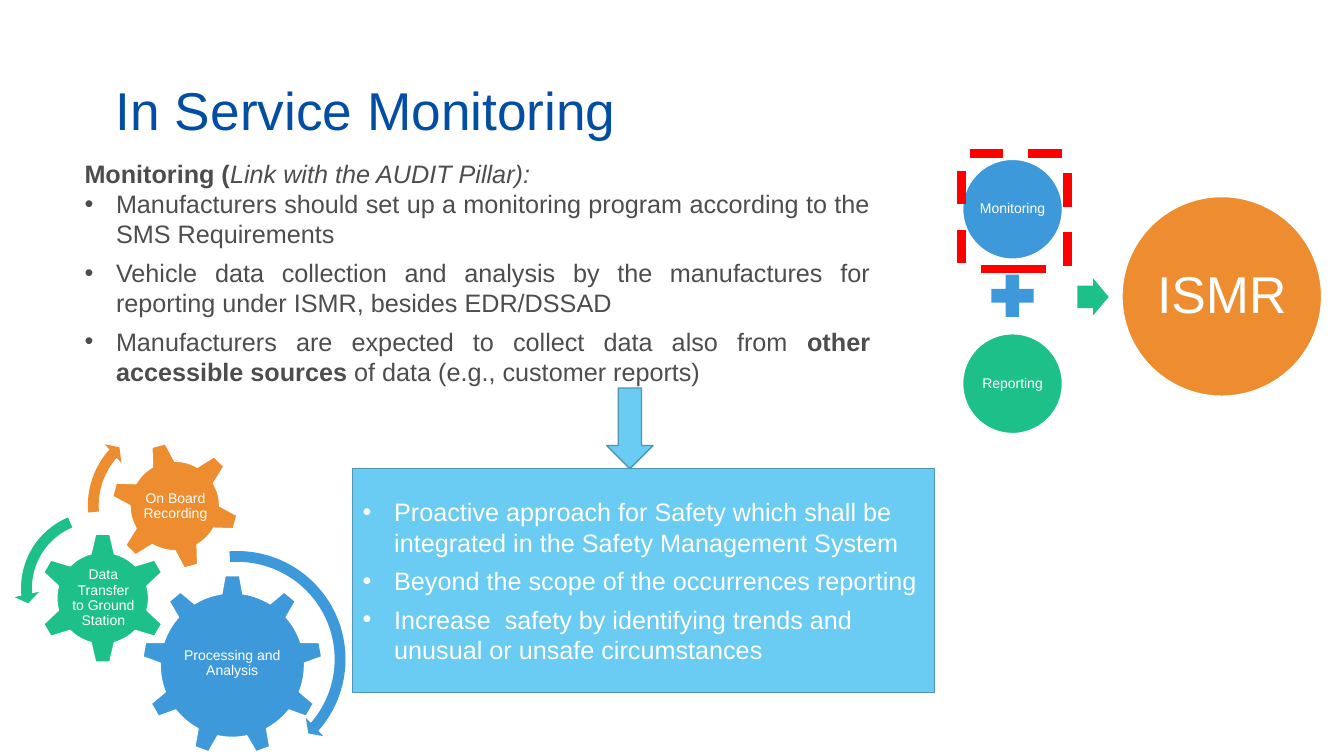
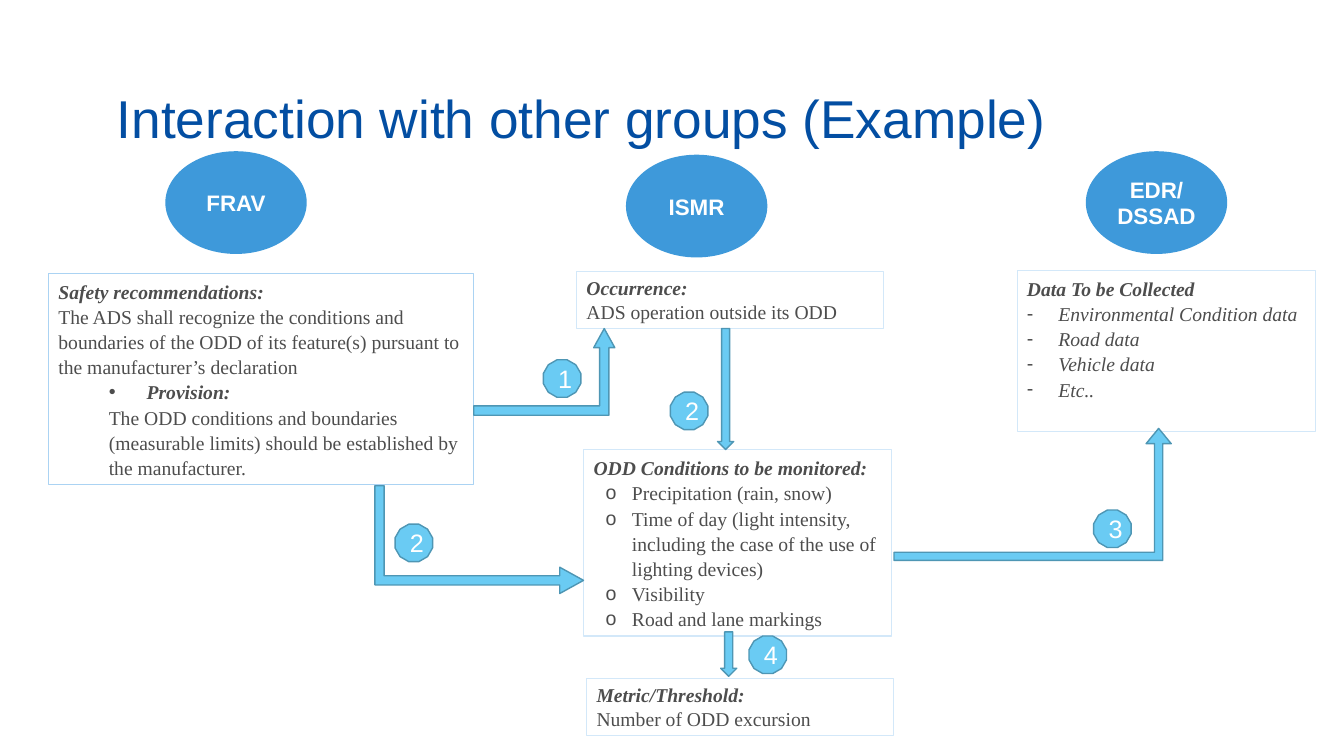
from dataclasses import dataclass
from typing import Optional

from lxml import etree
from pptx import Presentation
from pptx.dml.color import RGBColor
from pptx.enum import dml, shapes, text
from pptx.oxml import ns
from pptx.util import Pt

BLUE = RGBColor(0x3E, 0x99, 0xDA)
GREEN = RGBColor(0x1E, 0xC0, 0x8A)
ORANGE = RGBColor(0xED, 0x8D, 0x2F)
SKY = RGBColor(0x6A, 0xCB, 0xF3)
SKY_EDGE = RGBColor(0x4E, 0x96, 0xB4)
CARD_EDGE = RGBColor(0xD3, 0xE8, 0xF9)
STRONG_EDGE = RGBColor(0xAB, 0xD3, 0xF3)
TITLE_BLUE = RGBColor(0x03, 0x4E, 0xA2)
GRAY = RGBColor(0x4D, 0x4D, 0x4D)
RED = RGBColor(0xFF, 0x00, 0x00)
WHITE = RGBColor(0xFF, 0xFF, 0xFF)

SANS = "Arial"
SERIF = "Times New Roman"
KIND = shapes.MSO_SHAPE
ALIGN = text.PP_ALIGN
TOP, MIDDLE, BOTTOM = (text.MSO_ANCHOR.TOP, text.MSO_ANCHOR.MIDDLE,
                       text.MSO_ANCHOR.BOTTOM)


@dataclass
class Line:
    """One paragraph; runs are (text, style) pairs, style holding b and/or i."""
    runs: list
    bullet: str = ""
    margin: float = 0
    indent: float = 0
    align: ALIGN = ALIGN.LEFT
    after: float = 0
    spacing: Optional[float] = None


@dataclass
class Look:
    size: float
    color: RGBColor = WHITE
    font: str = SANS
    anchor: text.MSO_ANCHOR = MIDDLE
    inset: Optional[float] = None


BODY = Look(18, GRAY, anchor=TOP)
CALLOUT = Look(18)
CARD = Look(14, GRAY, SERIF, TOP)
SMALL_LABEL = Look(10, inset=1)
LARGE_LABEL = Look(37, inset=3.6)
GROUP_NAME = Look(16)
STEP = Look(18)


def inside(region, left, top, width, height):
    return region[0] + left, region[1] + top, width, height


def points(box):
    return [Pt(round(length, 2)) for length in box]


def write_lines(frame, lines, look):
    frame.word_wrap = True
    frame.vertical_anchor = look.anchor
    if look.inset is not None:
        frame.margin_left = frame.margin_right = Pt(look.inset)
        frame.margin_top = frame.margin_bottom = Pt(look.inset)
    for index, line in enumerate(lines):
        paragraph = frame.paragraphs[0] if index == 0 else frame.add_paragraph()
        properties = paragraph._p.get_or_add_pPr()
        if line.margin:
            properties.set("marL", str(Pt(line.margin)))
            properties.set("indent", str(Pt(line.indent)))
        if line.bullet:
            font = etree.SubElement(properties, ns.qn("a:buFont"))
            font.set("typeface", SANS)
            etree.SubElement(properties, ns.qn("a:buChar")).set("char", line.bullet)
        paragraph.alignment = line.align
        paragraph.space_after = Pt(line.after)
        if line.spacing:
            paragraph.line_spacing = line.spacing
        for words, style in line.runs:
            run = paragraph.add_run()
            run.text = words
            run.font.name = look.font
            run.font.size = Pt(look.size)
            run.font.color.rgb = look.color
            run.font.bold = "b" in style
            run.font.italic = "i" in style


def add_shape(slide, kind, box, fill=None, edge=None, width=1, adjust=(), rotation=0):
    shape = slide.shapes.add_shape(kind, *points(box))
    shape.shadow.inherit = False
    shape.rotation = rotation
    if fill is None:
        shape.fill.background()
    else:
        shape.fill.solid()
        shape.fill.fore_color.rgb = fill
    if edge is None:
        shape.line.fill.background()
    else:
        shape.line.color.rgb = edge
        shape.line.width = Pt(width)
    for index, value in enumerate(adjust):
        shape.adjustments[index] = value
    return shape


def add_text(slide, box, lines, look):
    write_lines(slide.shapes.add_textbox(*points(box)).text_frame, lines, look)


def centred(words, style="", spacing=None):
    return [Line([(words, style)], align=ALIGN.CENTER, spacing=spacing)]


def add_titled_slide(presentation, title, left, top):
    slide = presentation.slides.add_slide(presentation.slide_layouts[5])
    shape = slide.shapes.title
    shape.left, shape.top, shape.width, shape.height = points((left, top, 808, 62))
    frame = shape.text_frame
    frame.text = title
    frame.auto_size = text.MSO_AUTO_SIZE.NONE
    frame.vertical_anchor = BOTTOM
    frame.margin_bottom = 0
    paragraph = frame.paragraphs[0]
    paragraph.alignment = ALIGN.LEFT
    paragraph.line_spacing = 0.9
    font = paragraph.runs[0].font
    font.name, font.size, font.color.rgb = SANS, Pt(38), TITLE_BLUE
    return slide


def bullets(items, align):
    return [Line(runs, "•", 22.5, -22.5, align, 6) for runs in items]


def add_monitoring_text(slide, box):
    heading = Line([("Monitoring (", "b"), ("Link with the AUDIT Pillar):", "i")])
    items = [
        [("Manufacturers should set up a monitoring program according to the "
          "SMS Requirements", "")],
        [("Vehicle data collection and analysis by the manufactures for "
          "reporting under ISMR, besides EDR/DSSAD", "")],
        [("Manufacturers are expected to collect data also from ", ""),
         ("other accessible sources ", "b"),
         ("of data (e.g., customer reports)", "")],
    ]
    add_text(slide, box, [heading] + bullets(items, ALIGN.JUSTIFY), BODY)


def add_ismr_equation(slide, region):
    """Monitoring plus Reporting gives ISMR, with Monitoring framed."""
    circles = [
        ("Monitoring", 0, 0, 71.3, BLUE, SMALL_LABEL),
        ("Reporting", 0, 124.6, 71.3, GREEN, SMALL_LABEL),
        ("ISMR", 113.8, 26.6, 142.6, ORANGE, LARGE_LABEL),
    ]
    for name, left, top, size, color, look in circles:
        circle = add_shape(slide, KIND.OVAL, inside(region, left, top, size, size),
                           color, WHITE)
        write_lines(circle.text_frame, centred(name, spacing=0.9), look)
    add_shape(slide, KIND.MATH_PLUS, inside(region, 15.1, 77, 41, 41), BLUE)
    add_shape(slide, KIND.RIGHT_ARROW, inside(region, 82, 85, 22.4, 26.6), GREEN,
              adjust=(0.6, 0.5))
    frame = add_shape(slide, KIND.RECTANGLE, inside(region, -0.7, -4.3, 75.6, 82.8),
                      edge=RED, width=6)
    frame.line.dash_style = dml.MSO_LINE.DASH


def add_callout(slide, box):
    items = [
        "Proactive approach for Safety which shall be integrated in the Safety "
        "Management System",
        "Beyond the scope of the occurrences reporting",
        "Increase  safety by identifying trends and unusual or unsafe circumstances",
    ]
    panel = add_shape(slide, KIND.FLOWCHART_PROCESS, box, SKY, SKY_EDGE)
    lines = bullets([[(item, "")] for item in items], ALIGN.LEFT)
    write_lines(panel.text_frame, lines, CALLOUT)
    add_shape(slide, KIND.DOWN_ARROW, inside(box, 181.4, -57.6, 33.1, 57.6),
              SKY, SKY_EDGE)


def add_gears(slide, region):
    gears = [
        ("Processing and Analysis", KIND.GEAR_9, (91.5, 114.1, 128.9, 128.9),
         (117.4, 144.4, 77, 66.2), BLUE, 0),
        ("Data Transfer to Ground Station", KIND.GEAR_6, (16.6, 83.9, 93.6, 93.6),
         (40.4, 107.6, 46.8, 46.1), GREEN, 0),
        ("On Board Recording", KIND.GEAR_6, (69.2, 19.1, 91.4, 91.4),
         (89.4, 39.2, 51.8, 51.8), ORANGE, 345),
    ]
    for name, kind, gear_box, label_box, color, rotation in gears:
        add_shape(slide, kind, inside(region, *gear_box), color, WHITE,
                  rotation=rotation)
        add_text(slide, inside(region, *label_box), centred(name, spacing=0.9),
                 SMALL_LABEL)
    arrows = [
        (KIND.CIRCULAR_ARROW, 77.1, 91.8, 164.9, BLUE,
         (0.047, 2.99, 24.777, 159.468, 0.055)),
        (KIND.LEFT_CIRCULAR_ARROW, 0, 63.7, 119.5, GREEN,
         (0.065, 4.3, 104.891, 148.378, 0.075)),
        (KIND.CIRCULAR_ARROW, 47.6, 0, 128.9, ORANGE,
         (0.06, 3.941, 133.138, 105.082, 0.07)),
    ]
    for kind, left, top, size, color, adjust in arrows:
        add_shape(slide, kind, inside(region, left, top, size, size), color,
                  adjust=adjust)


def build_monitoring_slide(presentation):
    slide = add_titled_slide(presentation, "In Service Monitoring", 75.6, 39.6)
    add_monitoring_text(slide, (53.3, 109.4, 575.3, 172))
    add_ismr_equation(slide, (687.6, 113.8))
    add_callout(slide, (252, 334.8, 415.4, 159.8))
    add_gears(slide, (10, 296.6))


def add_group(slide, left, top, name):
    oval = add_shape(slide, KIND.OVAL, (left, top, 101, 73.4), BLUE)
    write_lines(oval.text_frame, centred(name, "b"), GROUP_NAME)


def add_card(slide, box, heading, lines, edge=CARD_EDGE, spacing=None):
    card = add_shape(slide, KIND.RECTANGLE, box, edge=edge, width=0.75)
    all_lines = [Line([(heading, "bi")])] + lines
    for line in all_lines:
        line.spacing = spacing
    write_lines(card.text_frame, all_lines, CARD)


def add_cards(slide):
    add_card(slide, (34.6, 195.1, 303.8, 151.2), "Safety recommendations:", [
        Line([("The ADS shall recognize the conditions and boundaries of the ODD of "
               "its feature(s) pursuant to the manufacturer’s declaration", "")]),
        Line([("Provision:", "bi")], "•", 63, -27),
        Line([("The ODD conditions and boundaries (measurable limits) should be "
               "established by the manufacturer.", "")], margin=36),
    ], STRONG_EDGE, 1.07)
    add_card(slide, (411.8, 193.7, 219.6, 41), "Occurrence:",
             [Line([("ADS operation outside its ODD", "")])])
    conditions = [
        "Precipitation (rain, snow)",
        "Time of day (light intensity, including the case of the use of lighting "
        "devices)",
        "Visibility",
        "Road and lane markings",
    ]
    add_card(slide, (416.9, 321.1, 219.6, 133.2), "ODD Conditions to be monitored:",
             [Line([(item, "")], "o", 27.4, -18.7) for item in conditions],
             spacing=1.07)
    data = ["Environmental Condition data", "Road data", "Vehicle data", "Etc.."]
    add_card(slide, (726.5, 193, 213.1, 115.2), "Data To be Collected",
             [Line([(item, "i")], "-", 22.5, -22.5) for item in data], spacing=1.07)
    add_card(slide, (419, 484.6, 219.6, 41), "Metric/Threshold:",
             [Line([("Number of ODD excursion", "")])])


def add_flow(slide):
    """Block arrows between the cards, each with its numbered step."""
    arrows = [
        (KIND.BENT_UP_ARROW, (338.4, 234.7, 100.8, 61.9), (0.107, 0.122, 0.221), 0),
        (KIND.DOWN_ARROW, (512.6, 234.7, 11.5, 86.4), (), 0),
        (KIND.BENT_UP_ARROW, (303.8, 311, 77, 149), (0.085, 0.122, 0.221), 90),
        (KIND.BENT_UP_ARROW, (638.6, 306, 198, 94.3), (0.062, 0.095, 0.116), 0),
        (KIND.DOWN_ARROW, (514.8, 451.4, 11.5, 31.7), (), 0),
    ]
    for kind, box, adjust, rotation in arrows:
        add_shape(slide, kind, box, SKY, SKY_EDGE, adjust=adjust, rotation=rotation)
    steps = [("1", 388.1, 257), ("2", 282.2, 374.4), ("2", 478.8, 280.1),
             ("3", 781.2, 364.3), ("4", 535, 454.3)]
    for number, left, top in steps:
        badge = add_shape(slide, KIND.DODECAGON, (left, top, 26.8, 26.8),
                          SKY, SKY_EDGE)
        write_lines(badge.text_frame, centred(number), STEP)


def build_interaction_slide(presentation):
    slide = add_titled_slide(presentation, "Interaction with other groups (Example)",
                             76.3, 45.4)
    for name, left, top in [("FRAV", 118.1, 108), ("ISMR", 447.1, 110.5),
                            ("EDR/ DSSAD", 775.6, 108)]:
        add_group(slide, left, top, name)
    add_cards(slide)
    add_flow(slide)


def main():
    presentation = Presentation()
    presentation.slide_width, presentation.slide_height = Pt(960), Pt(540)
    build_monitoring_slide(presentation)
    build_interaction_slide(presentation)
    presentation.save("out.pptx")


if __name__ == "__main__":
    main()
